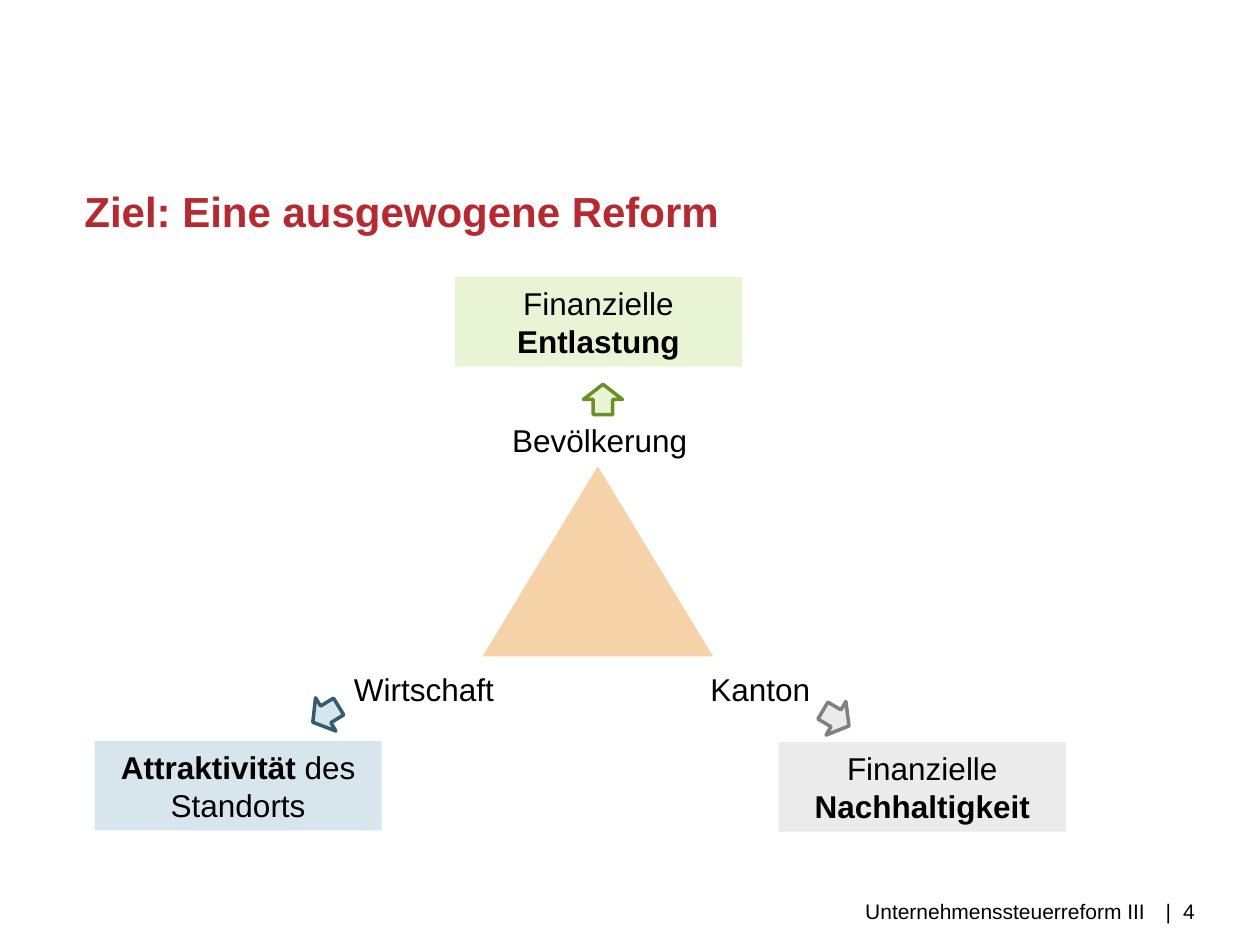
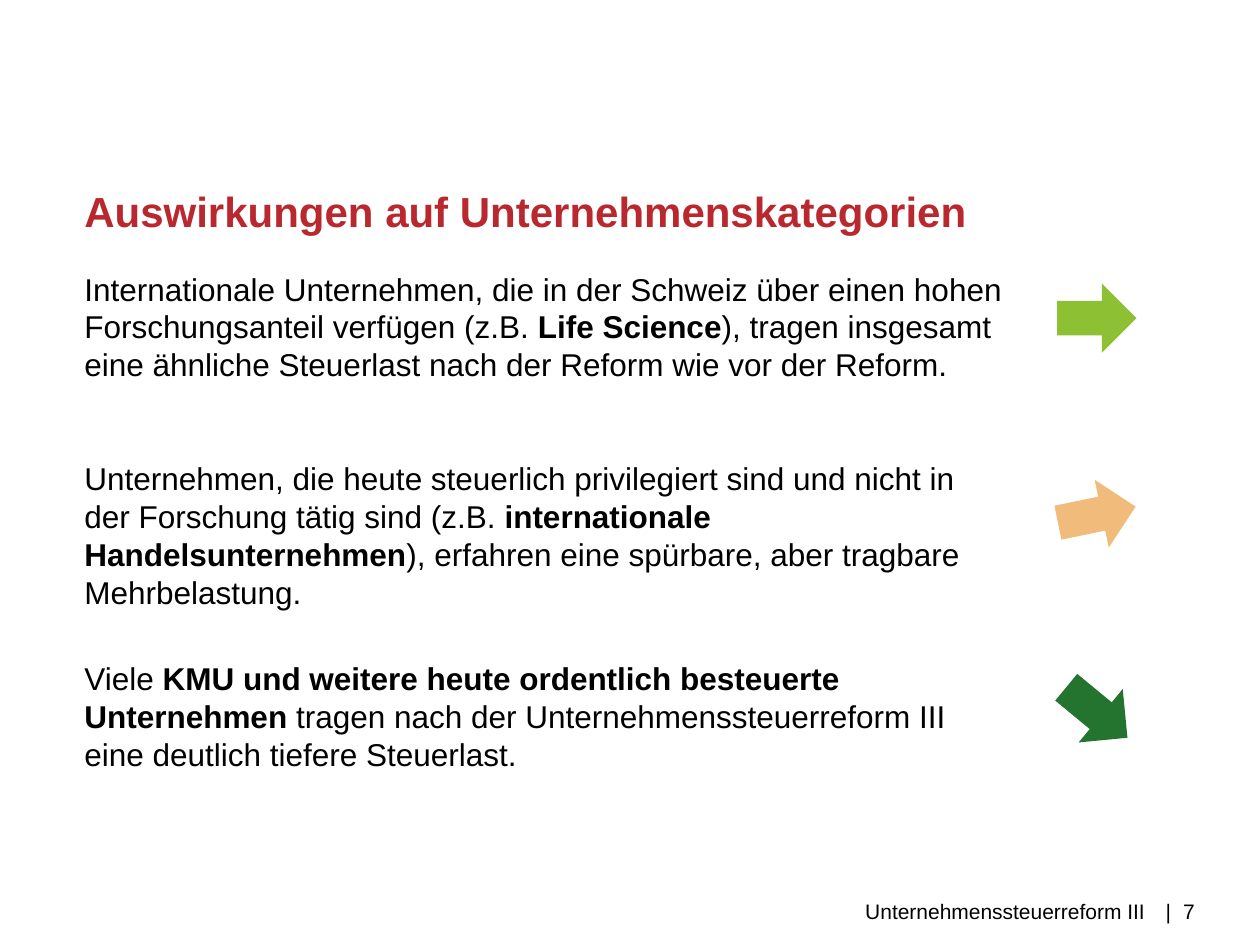
from lxml.etree import SubElement
from pptx import Presentation
from pptx.dml.color import RGBColor
from pptx.enum.shapes import MSO_SHAPE
from pptx.enum.text import MSO_ANCHOR, PP_ALIGN
from pptx.oxml.ns import qn
from pptx.util import Inches, Pt

FONT = "Arial"
BLACK = RGBColor(0x00, 0x00, 0x00)
RED = RGBColor(0xB9, 0x28, 0x2E)
SAND = RGBColor(0xF5, 0xD2, 0xA7)
MINT = RGBColor(0xE9, 0xF4, 0xD5)
OLIVE = RGBColor(0x6A, 0x90, 0x26)
SKY = RGBColor(0xD7, 0xE6, 0xEC)
STEEL = RGBColor(0x34, 0x5C, 0x6E)
PALE = RGBColor(0xEB, 0xEB, 0xEB)
GREY = RGBColor(0x80, 0x80, 0x80)
LIME = RGBColor(0x8E, 0xC0, 0x33)
PEACH = RGBColor(0xF1, 0xBB, 0x7B)
GREEN = RGBColor(0x24, 0x73, 0x2E)


class Deck:
    def __init__(self):
        self.prs = Presentation()
        self.prs.slide_width = Inches(10)
        self.prs.slide_height = Inches(7.5)
        self.slide = None

    def page(self, title, number):
        self.slide = self.prs.slides.add_slide(self.prs.slide_layouts[6])
        frame = self.frame(0.67, 1.47, 8.9, 0.4)
        frame.vertical_anchor = MSO_ANCHOR.BOTTOM
        self.fill_in(frame.paragraphs[0], [(title, True)], 24, RED)
        frame = self.frame(2.99, 7.1, 6.1, 0.4, inset=0.03)
        self.fill_in(frame.paragraphs[0], [("Unternehmenssteuerreform III", False)],
                     12, align=PP_ALIGN.RIGHT)
        frame = self.frame(9.25, 7.1, 0.75, 0.4, inset=0.03)
        para = frame.paragraphs[0]
        self.tab(para, 0.14)
        self.fill_in(para, [(f"|\t{number}", False)], 12)

    def tab(self, para, pos):
        tabs = SubElement(para._p.get_or_add_pPr(), qn("a:tabLst"))
        SubElement(tabs, qn("a:tab"), pos=str(Inches(pos)), algn="l")

    def frame(self, left, top, width, height, side=0, inset=0):
        box = self.slide.shapes.add_textbox(
            Inches(left), Inches(top), Inches(width), Inches(height))
        frame = box.text_frame
        frame.word_wrap = True
        frame.margin_left = frame.margin_right = Inches(side)
        frame.margin_top = Inches(inset)
        frame.margin_bottom = 0
        return frame

    def fill_in(self, para, parts, size=18, color=BLACK, align=PP_ALIGN.LEFT):
        para.alignment = align
        para.font.name = FONT
        para.font.size = Pt(size)
        para.font.color.rgb = color
        for text, bold in parts:
            run = para.add_run()
            run.text = text
            run.font.bold = bold

    def label(self, left, top, text):
        frame = self.frame(left, top, 2.07, 0.4, side=0.1, inset=0.05)
        self.fill_in(frame.paragraphs[0], [(text, False)], align=PP_ALIGN.CENTER)

    def body(self, left, top, width, height, items):
        frame = self.frame(left, top, width, height)
        for i, (gap, parts) in enumerate(items):
            para = frame.add_paragraph() if i else frame.paragraphs[0]
            para.space_before = Pt(gap)
            self.fill_in(para, parts)

    def shape(self, kind, left, top, width, height, fill, line=None, turn=0):
        shape = self.slide.shapes.add_shape(
            kind, Inches(left), Inches(top), Inches(width), Inches(height))
        shape.shadow.inherit = False
        shape.rotation = turn
        shape.fill.solid()
        shape.fill.fore_color.rgb = fill
        if line is None:
            shape.line.fill.background()
        else:
            shape.line.color.rgb = line
            shape.line.width = Pt(2)
        return shape

    def card(self, left, top, fill, parts):
        shape = self.shape(MSO_SHAPE.RECTANGLE, left, top, 2.28, 0.71, fill)
        shape.text_frame.word_wrap = True
        self.fill_in(shape.text_frame.paragraphs[0], parts, align=PP_ALIGN.CENTER)


def goals(deck):
    deck.page("Ziel: Eine ausgewogene Reform", 4)
    deck.shape(MSO_SHAPE.ISOSCELES_TRIANGLE, 3.83, 3.7, 1.83, 1.51, SAND)
    for left, top, text in [(3.76, 3.29, "Bevölkerung "),
                            (2.33, 5.27, "Wirtschaft"),
                            (5, 5.27, "Kanton")]:
        deck.label(left, top, text)
    for left, top, turn, fill, line in [(4.63, 3.05, 180, MINT, OLIVE),
                                        (6.48, 5.58, 300.5, PALE, GREY),
                                        (2.43, 5.55, 58.5, SKY, STEEL)]:
        deck.shape(MSO_SHAPE.DOWN_ARROW, left, top, 0.31, 0.24, fill, line, turn)
    deck.card(0.75, 5.88, SKY, [("Attraktivität ", True), ("des Standorts", False)])
    deck.card(3.61, 2.2, MINT, [("Finanzielle", False), (" Entlastung", True)])
    deck.card(6.18, 5.89, PALE, [("Finanzielle", False), (" Nachhaltigkeit", True)])


def effects(deck):
    deck.page("Auswirkungen auf Unternehmenskategorien", 7)
    deck.body(0.67, 2.14, 7.32, 4.65, [
        (0, [("Internationale Unternehmen, die in der Schweiz über einen hohen "
              "Forschungsanteil verfügen (z.B. ", False),
             ("Life Science", True),
             ("), tragen insgesamt eine ähnliche Steuerlast nach der Reform "
              "wie vor der Reform.", False)]),
        (43.5, [("Unternehmen, die heute steuerlich privilegiert sind und nicht "
                 "in der Forschung tätig sind (z.B. ", False),
                ("internationale Handelsunternehmen", True),
                ("), erfahren eine spürbare, aber tragbare Mehrbelastung.", False)]),
        (28, [("Viele ", False),
              ("KMU und weitere heute ordentlich besteuerte Unternehmen ", True),
              ("tragen nach der Unternehmenssteuerreform III eine deutlich "
               "tiefere Steuerlast.", False)]),
    ])
    for top, turn, fill in [(2.25, 0, LIME), (3.81, 348.3, PEACH), (5.38, 39.5, GREEN)]:
        deck.shape(MSO_SHAPE.RIGHT_ARROW, 8.39, top, 0.63, 0.55, fill, turn=turn)


def main():
    deck = Deck()
    goals(deck)
    effects(deck)
    deck.prs.save("out.pptx")


if __name__ == "__main__":
    main()
